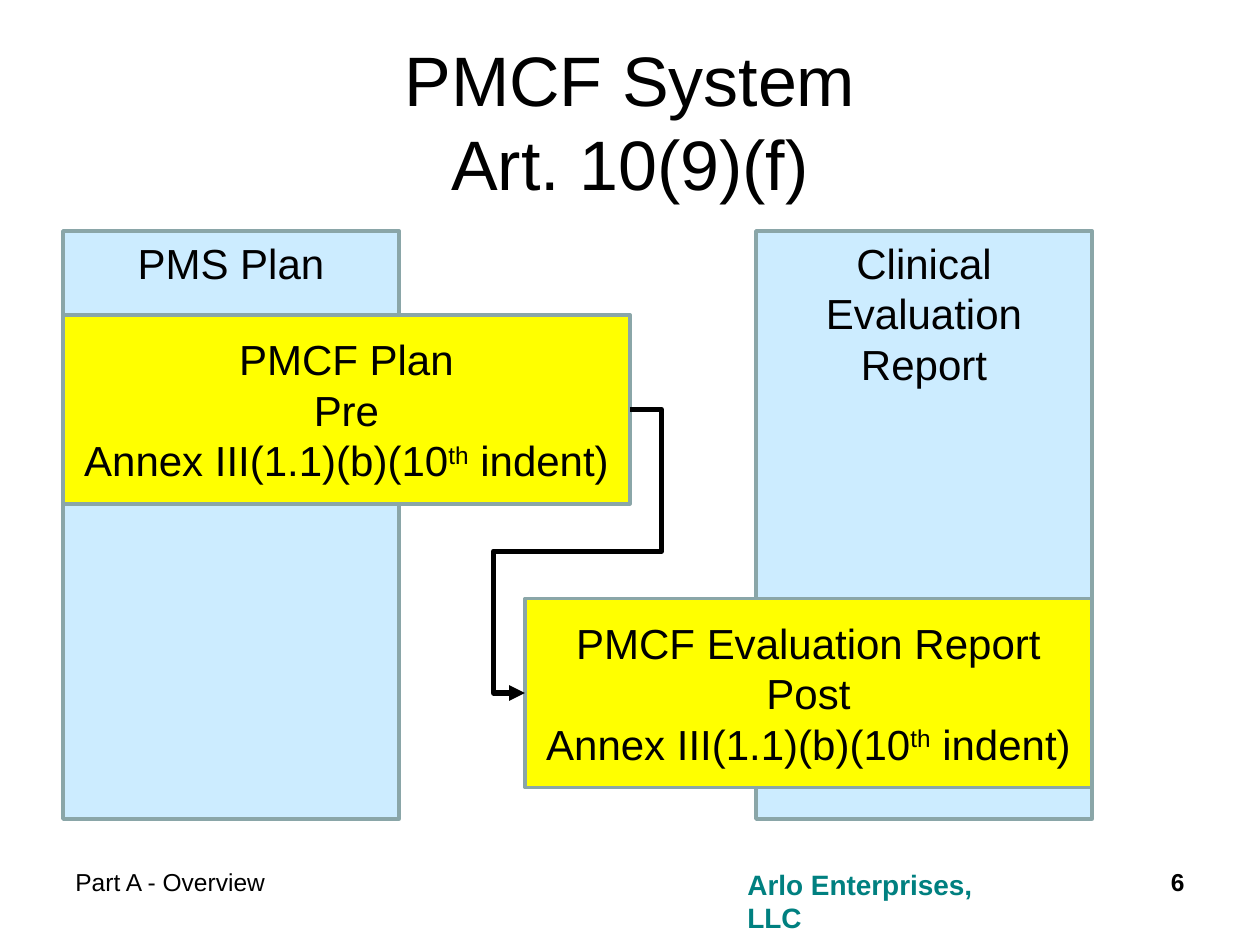
from lxml import etree
from pptx import Presentation
from pptx import util as u
from pptx.dml.color import RGBColor
from pptx.enum import shapes, text
from pptx.oxml import ns

COLUMNS, ROWS = 120, 90
CELL = u.Inches(10) // COLUMNS
FONT = "Arial"
BLACK = RGBColor(0x00, 0x00, 0x00)
TEAL = RGBColor(0x00, 0x80, 0x80)
PALE_BLUE = RGBColor(0xCC, 0xEC, 0xFF)
YELLOW = RGBColor(0xFF, 0xFF, 0x00)
GREY = RGBColor(0x8A, 0xA6, 0xA8)
LEFT, CENTER, RIGHT = text.PP_ALIGN.LEFT, text.PP_ALIGN.CENTER, text.PP_ALIGN.RIGHT
TOP, MIDDLE = text.MSO_ANCHOR.TOP, text.MSO_ANCHOR.MIDDLE
ANNEX = ["Annex III(1.1)(b)(10", ("th", 30000), " indent)"]


def grid(*cells):
    """Turn counts of grid cells into lengths."""
    return [u.Emu(round(count * CELL)) for count in cells]


def add_run(paragraph, content, size, color, bold):
    """Add one run; a (text, baseline) pair is raised."""
    wording, baseline = content if isinstance(content, tuple) else (content, 0)
    run = paragraph.add_run()
    run.text = wording
    run.font.name, run.font.size, run.font.bold = FONT, u.Pt(size), bold
    run.font.color.rgb = color
    if baseline:
        run.font._element.set("baseline", str(baseline))


def write(shape, lines, size, align=LEFT, anchor=TOP, color=BLACK, bold=False):
    """Fill a shape with paragraphs, each given as a list of runs."""
    frame = shape.text_frame
    frame.word_wrap = True
    frame.vertical_anchor = anchor
    for index, runs in enumerate(lines):
        paragraph = frame.add_paragraph() if index else frame.paragraphs[0]
        paragraph.alignment = align
        for content in runs:
            add_run(paragraph, content, size, color, bold)


def add_label(slide, cells, lines, size, **style):
    """Add a text box on the grid."""
    write(slide.shapes.add_textbox(*grid(*cells)), lines, size, **style)


def add_box(slide, cells, fill, lines, anchor):
    """Add an outlined rectangle with centred text."""
    box = slide.shapes.add_shape(shapes.MSO_SHAPE.RECTANGLE, *grid(*cells))
    box.shadow.inherit = False
    box.fill.solid()
    box.fill.fore_color.rgb = fill
    box.line.color.rgb, box.line.width = GREY, u.Pt(2)
    write(box, lines, 24, CENTER, anchor)
    return box


def add_elbow_arrow(slide, start, end, bends):
    """Join the right side of one box to the left side of another."""
    arrow = slide.shapes.add_connector(shapes.MSO_CONNECTOR.ELBOW, 0, 0, 0, 0)
    arrow.begin_connect(start, 3)
    arrow.end_connect(end, 1)
    arrow.line.color.rgb, arrow.line.width = BLACK, u.Pt(3)
    properties = arrow._element.spPr
    geometry = properties.find(ns.qn("a:prstGeom"))
    geometry.set("prst", "bentConnector5")
    guides = geometry.find(ns.qn("a:avLst"))
    for number, bend in enumerate(bends, 1):
        etree.SubElement(guides, ns.qn("a:gd"), name=f"adj{number}", fmla=f"val {bend}")
    etree.SubElement(properties.find(ns.qn("a:ln")), ns.qn("a:tailEnd"), type="triangle")
    etree.SubElement(properties, ns.qn("a:effectLst"))


def main():
    """Build the slide and save it."""
    presentation = Presentation()
    presentation.slide_width, presentation.slide_height = grid(COLUMNS, ROWS)
    slide = presentation.slides.add_slide(presentation.slide_layouts[6])
    add_label(slide, (70, 82, 28, 4.5), [["Arlo Enterprises, LLC"]], 16, color=TEAL, bold=True)
    add_label(slide, (6, 4, 108, 15), [["PMCF System"], ["Art. 10(9)(f)"]], 40,
              align=CENTER, anchor=MIDDLE)
    add_label(slide, (6, 82, 62, 6.25), [["Part A - Overview"]], 14)
    add_label(slide, (101, 82, 13, 6.25), [["6"]], 14, align=RIGHT, bold=True)
    add_box(slide, (6, 22, 32, 56), PALE_BLUE, [["PMS Plan"]], TOP)
    plan = add_box(slide, (6, 30, 54, 18), YELLOW, [["PMCF Plan"], ["Pre"], ANNEX], MIDDLE)
    add_box(slide, (72, 22, 32, 56), PALE_BLUE, [["Clinical Evaluation Report"]], TOP)
    report = add_box(slide, (50, 57, 54, 18), YELLOW,
                     [["PMCF Evaluation Report"], ["Post"], ANNEX], MIDDLE)
    add_elbow_arrow(slide, plan, report, (-30000, 50000, 130000))
    presentation.save("out.pptx")


if __name__ == "__main__":
    main()
